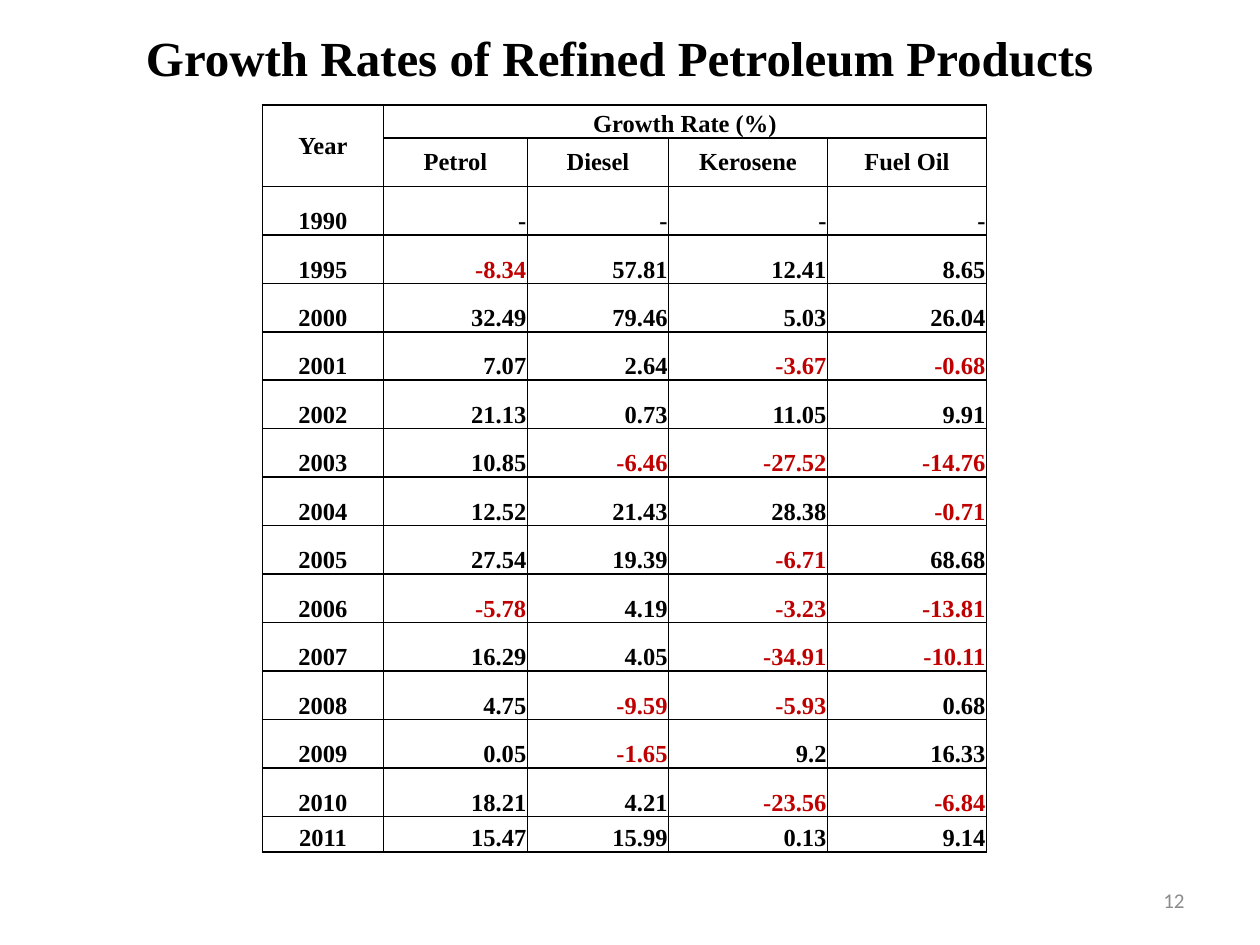
from dataclasses import dataclass

from lxml import etree
from pptx import Presentation
from pptx import util as u
from pptx.dml.color import RGBColor
from pptx.enum import text
from pptx.oxml.ns import qn


@dataclass(frozen=True)
class Theme:
    ink: str = "000000"
    negative: str = "C00000"
    muted: str = "8C8C8C"
    serif: str = "Times New Roman"
    sans: str = "Calibri"
    title_size: int = 28
    table_size: int = 14
    number_size: int = 12
    border: int = 1


THEME = Theme()
CENTER, RIGHT = text.PP_ALIGN.CENTER, text.PP_ALIGN.RIGHT
TOP, MIDDLE, BOTTOM = (text.MSO_ANCHOR.TOP, text.MSO_ANCHOR.MIDDLE,
                       text.MSO_ANCHOR.BOTTOM)

PRODUCTS = ["Petrol", "Diesel", "Kerosene", "Fuel Oil"]
GROWTH_RATES = [
    ["1990", "-", "-", "-", "-"],
    ["1995", "-8.34", "57.81", "12.41", "8.65"],
    ["2000", "32.49", "79.46", "5.03", "26.04"],
    ["2001", "7.07", "2.64", "-3.67", "-0.68"],
    ["2002", "21.13", "0.73", "11.05", "9.91"],
    ["2003", "10.85", "-6.46", "-27.52", "-14.76"],
    ["2004", "12.52", "21.43", "28.38", "-0.71"],
    ["2005", "27.54", "19.39", "-6.71", "68.68"],
    ["2006", "-5.78", "4.19", "-3.23", "-13.81"],
    ["2007", "16.29", "4.05", "-34.91", "-10.11"],
    ["2008", "4.75", "-9.59", "-5.93", "0.68"],
    ["2009", "0.05", "-1.65", "9.2", "16.33"],
    ["2010", "18.21", "4.21", "-23.56", "-6.84"],
    ["2011", "15.47", "15.99", "0.13", "9.14"],
]


def write(paragraph, words, size, color, align, font=THEME.serif, bold=True):
    paragraph.text = words
    paragraph.alignment = align
    paragraph.font.name = font
    paragraph.font.size = u.Pt(size)
    paragraph.font.bold = bold
    paragraph.font.color.rgb = RGBColor.from_string(color)


def draw_borders(cell):
    properties = cell._tc.get_or_add_tcPr()
    for position, side in enumerate(("lnL", "lnR", "lnT", "lnB")):
        line = etree.Element(qn(f"a:{side}"), w=str(u.Pt(THEME.border)))
        fill = etree.SubElement(line, qn("a:solidFill"))
        etree.SubElement(fill, qn("a:srgbClr"), val=THEME.ink)
        properties.insert(position, line)


def fill_cell(cell, words, align, anchor):
    is_negative = words.startswith("-") and words != "-"
    color = THEME.negative if is_negative else THEME.ink
    write(cell.text_frame.paragraphs[0], words, THEME.table_size, color, align)
    cell.vertical_anchor = anchor
    cell.margin_left = cell.margin_right = cell.margin_top = u.Cm(0.02)
    cell.margin_bottom = 0
    cell.fill.background()
    draw_borders(cell)


def add_title(slide, left, top, width, height):
    title = slide.shapes.title
    title.left, title.top, title.width, title.height = left, top, width, height
    title.text_frame.vertical_anchor = TOP
    write(title.text_frame.paragraphs[0],
          "Growth Rates of Refined Petroleum Products",
          THEME.title_size, THEME.ink, CENTER)


def add_growth_table(slide, left, top, width, height):
    rows = [["Year", "Growth Rate (%)", "", "", ""],
            ["", *PRODUCTS],
            *GROWTH_RATES]
    table = slide.shapes.add_table(len(rows), len(rows[0]),
                                   left, top, width, height).table
    table.first_row = table.horz_banding = False

    column_shares = [0.96, 1.14, 1.12, 1.26, 1.26]
    for column, share in zip(table.columns, column_shares):
        column.width = int(width * share / sum(column_shares))

    first_height, last_height = u.Cm(0.66), u.Cm(0.72)
    inner_height = (height - first_height - last_height) // (len(rows) - 2)
    for row in table.rows:
        row.height = inner_height
    table.rows[0].height = first_height
    table.rows[len(rows) - 1].height = last_height

    for r, row in enumerate(rows):
        for c, words in enumerate(row):
            is_header = r < 2
            align = CENTER if is_header or c == 0 else RIGHT
            is_middle = r == 1 or (r, c) == (0, 0)
            fill_cell(table.cell(r, c), words, align,
                      MIDDLE if is_middle else BOTTOM)

    table.cell(0, 0).merge(table.cell(1, 0))
    table.cell(0, 1).merge(table.cell(0, len(PRODUCTS)))


def add_page_number(slide, left, top, width, height):
    frame = slide.shapes.add_textbox(left, top, width, height).text_frame
    frame.word_wrap = True
    frame.vertical_anchor = MIDDLE
    write(frame.paragraphs[0], "12", THEME.number_size, THEME.muted, RIGHT,
          font=THEME.sans, bold=False)


def main():
    deck = Presentation()
    deck.slide_width, deck.slide_height = u.Cm(25.4), u.Cm(19.05)
    title_only = deck.slide_layouts[5]
    slide = deck.slides.add_slide(title_only)
    add_title(slide, u.Cm(2.54), u.Cm(0.43), u.Cm(19.9), u.Cm(1.45))
    add_growth_table(slide, u.Cm(5.29), u.Cm(2.12), u.Cm(14.6), u.Cm(15.06))
    add_page_number(slide, u.Cm(18.2), u.Cm(17.65), u.Cm(5.93), u.Cm(1.01))
    deck.save("out.pptx")


if __name__ == "__main__":
    main()
